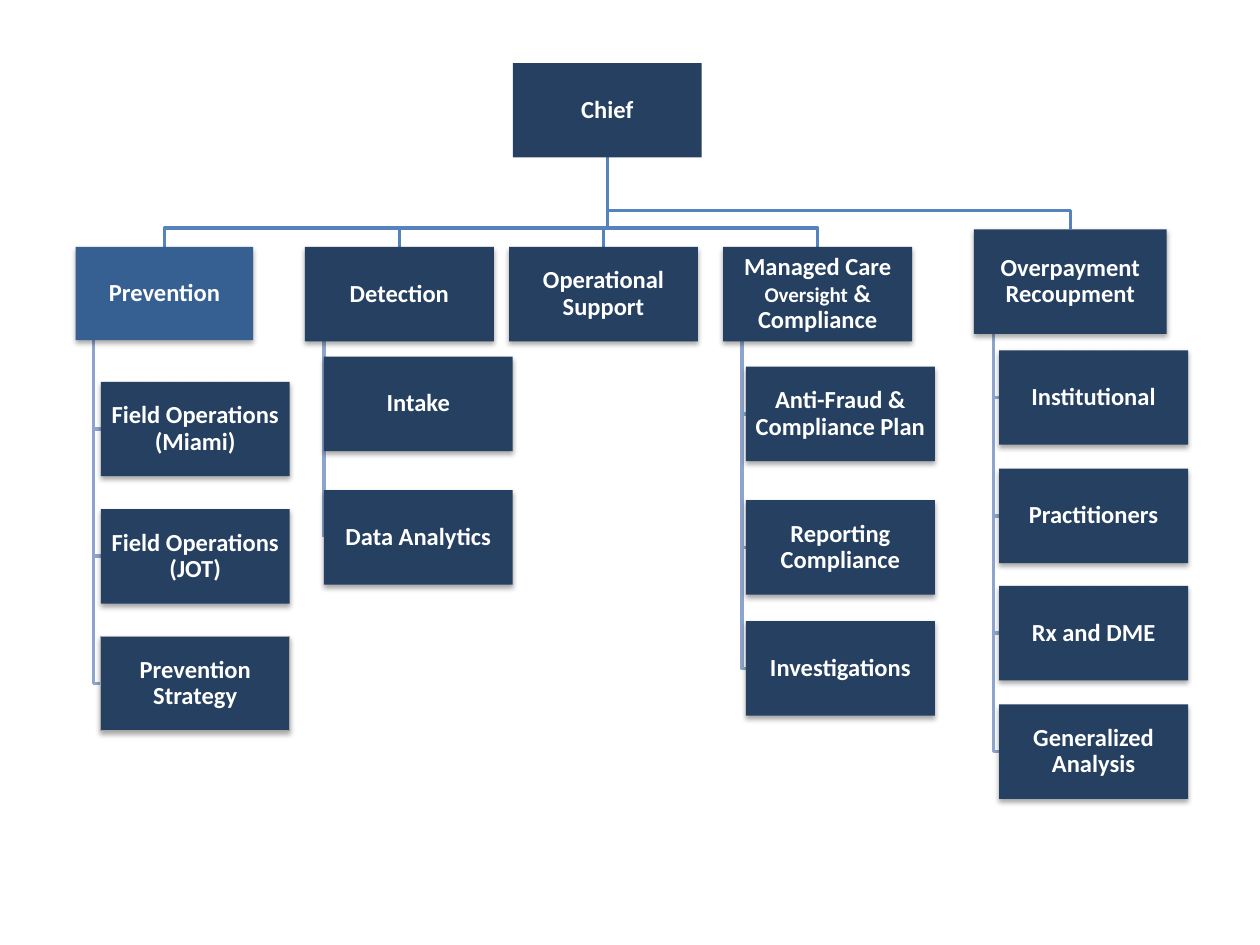
"""Build an organisation chart with a chief, five units and their teams."""
import lxml.etree
import pptx
import pptx.dml.color
import pptx.enum.shapes
import pptx.enum.text
import pptx.oxml
import pptx.util

Inches = pptx.util.Inches
Pt = pptx.util.Pt
NAVY, BLUE, WHITE, GREY = "254061", "376092", "FFFFFF", "A6A6A6"
TRUNK, BRANCH = "5483BE", "8DA5CC"
BOX_WIDTH, BOX_HEIGHT = 1.5, 0.75
ELBOW_RISE = 0.15
SHADOW = (
    '<a:outerShdw xmlns:a="http://schemas.openxmlformats.org/drawingml/2006/main"'
    ' blurRad="39370" dist="22860" dir="5400000" rotWithShape="0">'
    '<a:srgbClr val="000000"><a:alpha val="35000"/></a:srgbClr></a:outerShdw>'
)

presentation = pptx.Presentation()
presentation.slide_width, presentation.slide_height = Inches(10), Inches(7.5)
slide = presentation.slides.add_slide(presentation.slide_layouts[6])


def color(value):
    """Return the colour for a hex string."""
    return pptx.dml.color.RGBColor.from_string(value)


def add_elbow(points, line_color):
    """Draw an open, right-angled line through points given in inches."""
    start, *others = [(Inches(x), Inches(y)) for x, y in points]
    builder = slide.shapes.build_freeform(*start)
    builder.add_line_segments(others, close=False)
    shape = builder.convert_to_shape()
    shape.shadow.inherit = False
    shape.fill.background()
    shape.line.color.rgb = color(line_color)
    shape.line.width = Pt(2)


chief = (4.07, 0.5, BOX_WIDTH, BOX_HEIGHT, [("Chief", 14)])
units = [
    ((0.6, 1.96, 1.41, 0.74, [("Prevention", 14)]), 0.8,
     [("Field Operations (Miami)", 3.03), ("Field Operations (JOT)", 4.04),
      ("Prevention Strategy", 5.05)]),
    ((2.42, 1.96, BOX_WIDTH, BOX_HEIGHT, [("Detection", 14)]), 2.57,
     [("Intake", 2.83), ("Data Analytics", 3.89)]),
    ((4.04, 1.96, BOX_WIDTH, BOX_HEIGHT, [("Operational Support", 14)]), 4.19, []),
    ((5.74, 1.96, BOX_WIDTH, BOX_HEIGHT,
      [("Managed Care ", 14), ("Oversight", 12), (" & Compliance", 14)]), 5.92,
     [("Anti-Fraud & Compliance Plan", 2.91), ("Reporting Compliance", 3.97),
      ("Investigations", 4.93)]),
    ((7.73, 1.82, 1.53, 0.83, [("Overpayment Recoupment", 14)]), 7.93,
     [("Institutional", 2.78), ("Practitioners", 3.72), ("Rx and DME", 4.65),
      ("Generalized Analysis", 5.59)]),
]

boxes = [chief]
chief_center, chief_bottom = chief[0] + BOX_WIDTH / 2, chief[1] + BOX_HEIGHT
for unit, team_left, teams in units:
    left, top, width, height, label = unit
    center, elbow = left + width / 2, top - ELBOW_RISE
    add_elbow([(chief_center, chief_bottom), (chief_center, elbow),
               (center, elbow), (center, top)], TRUNK)
    boxes.append(unit)
    stem = left + width / 10
    for name, team_top in reversed(teams):
        middle = team_top + BOX_HEIGHT / 2
        add_elbow([(stem, top + height), (stem, middle), (team_left, middle)], BRANCH)
    for name, team_top in teams:
        boxes.append((team_left, team_top, BOX_WIDTH, BOX_HEIGHT, [(name, 14)]))

for left, top, width, height, label in boxes:
    name = label[0][0]
    shape = slide.shapes.add_shape(
        pptx.enum.shapes.MSO_SHAPE.RECTANGLE,
        Inches(left), Inches(top), Inches(width), Inches(height))
    shape.fill.solid()
    shape.fill.fore_color.rgb = color(BLUE if name == "Prevention" else NAVY)
    if name == "Prevention Strategy":
        shape.line.color.rgb = color(GREY)
        shape.line.width = Pt(0.75)
    else:
        shape.line.fill.background()
    shape.shadow.inherit = False
    if name != "Chief":
        effects = shape._element.spPr.find(pptx.oxml.ns.qn("a:effectLst"))
        effects.append(lxml.etree.fromstring(SHADOW))

    frame = shape.text_frame
    frame.word_wrap = True
    frame.vertical_anchor = pptx.enum.text.MSO_ANCHOR.MIDDLE
    frame.margin_left = frame.margin_right = Inches(0.01)
    frame.margin_top = frame.margin_bottom = Inches(0.01)
    paragraph = frame.paragraphs[0]
    paragraph.alignment = pptx.enum.text.PP_ALIGN.CENTER
    paragraph.line_spacing = 0.9
    paragraph.font.name = "Calibri"
    paragraph.font.bold = True
    paragraph.font.color.rgb = color(WHITE)
    for text, size in label:
        run = paragraph.add_run()
        run.text = text
        run.font.size = Pt(size)

presentation.save("out.pptx")
